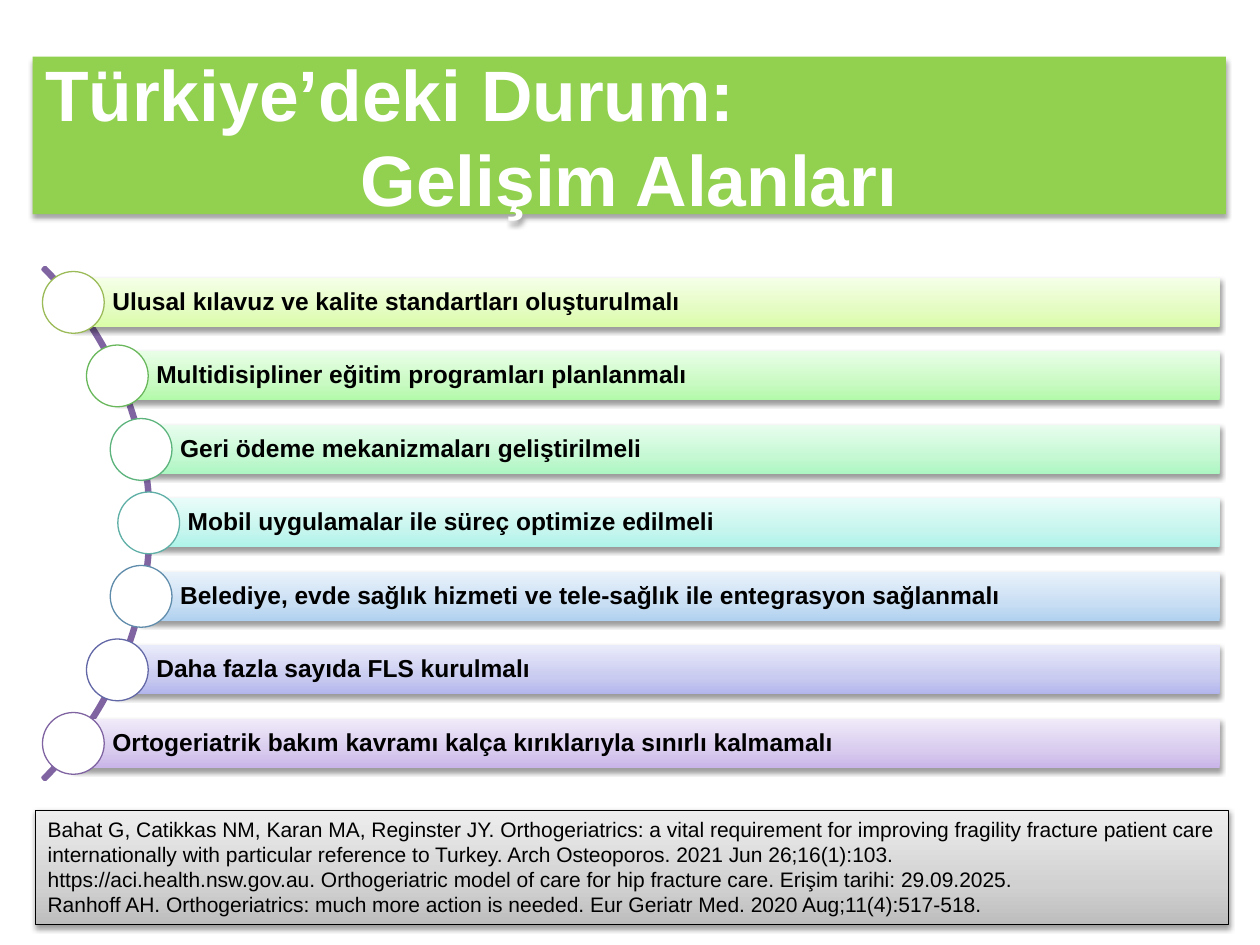
"""Build a slide on development areas in Turkey as a curved list with references."""
import math

import pptx
import pptx.dml.color
import pptx.enum.shapes
import pptx.enum.text
import pptx.oxml.ns
import pptx.oxml.xmlchemy
import pptx.util
from lxml import etree

Inches = pptx.util.Inches
Pt = pptx.util.Pt
SHAPE = pptx.enum.shapes.MSO_SHAPE
ALIGN = pptx.enum.text.PP_ALIGN
ANCHOR = pptx.enum.text.MSO_ANCHOR
qn = pptx.oxml.ns.qn


def rgb(value):
    return pptx.dml.color.RGBColor.from_string(value)


def add_panel(left, top, width, height, colors, lines, size, color, bold, alpha=38, dist=1.6):
    s = slide.shapes.add_shape(SHAPE.RECTANGLE, Inches(left), Inches(top), Inches(width), Inches(height))
    s.line.fill.background()
    if len(colors) == 1:
        s.fill.solid()
        s.fill.fore_color.rgb = rgb(colors[0])
    else:
        s.fill.gradient()
        s.fill.gradient_angle = 90
        stops = s._element.spPr.find(qn("a:gradFill")).find(qn("a:gsLst"))
        for stop in list(stops):
            stops.remove(stop)
        for pos, value in zip((0, 35, 100), colors):
            stop = etree.SubElement(stops, qn("a:gs"), pos=str(pos * 1000))
            etree.SubElement(stop, qn("a:srgbClr"), val=value)
    s.shadow.inherit = False
    effects = s._element.spPr.find(qn("a:effectLst"))
    shadow = etree.SubElement(effects, qn("a:outerShdw"), blurRad=str(Pt(3.1)), dist=str(Pt(dist)),
                              dir="5400000", rotWithShape="0")
    tint = etree.SubElement(shadow, qn("a:srgbClr"), val="000000")
    etree.SubElement(tint, qn("a:alpha"), val=str(alpha * 1000))
    tf = s.text_frame
    tf.word_wrap = True
    tf.vertical_anchor = ANCHOR.MIDDLE
    tf.text = "\n".join(lines)
    for p in tf.paragraphs:
        p.alignment = ALIGN.LEFT
        for r in p.runs:
            r.font.name = "Arial"
            r.font.size = Pt(size)
            r.font.bold = bold
            r.font.color.rgb = rgb(color)
    return s


prs = pptx.Presentation()
prs.slide_width = Inches(10)
prs.slide_height = Inches(7.5)
slide = prs.slides.add_slide(prs.slide_layouts[6])

title = add_panel(0.26, 0.45, 9.47, 1.25, ["92D050"], ["Türkiye’deki Durum:", "Gelişim Alanları"],
                  40.8, "FFFFFF", True, alpha=35, dist=1.8)
title.text_frame.paragraphs[1].alignment = ALIGN.CENTER

references = [
    "Bahat G, Catikkas NM, Karan MA, Reginster JY. Orthogeriatrics: a vital requirement for improving "
    "fragility fracture patient care internationally with particular reference to Turkey. "
    "Arch Osteoporos. 2021 Jun 26;16(1):103.",
    "https://aci.health.nsw.gov.au. Orthogeriatric model of care for hip fracture care. "
    "Erişim tarihi: 29.09.2025.",
    "Ranhoff AH. Orthogeriatrics: much more action is needed. Eur Geriatr Med. 2020 Aug;11(4):517-518.",
]
box = add_panel(0.28, 6.43, 9.47, 0.91, ["BDBDBD", "D1D1D1", "EEEEEE"], references, 12, "000000", False)
box.line.color.rgb = rgb("000000")
box.line.width = Pt(0.75)
box.text_frame.vertical_anchor = ANCHOR.TOP
box.text_frame.auto_size = pptx.enum.text.MSO_AUTO_SIZE.SHAPE_TO_FIT_TEXT

arc = slide.shapes.add_shape(SHAPE.BLOCK_ARC, Inches(-4.55), Inches(1.28), Inches(5.75), Inches(5.75))
for i, value in enumerate((189, 27, 0.004)):
    arc.adjustments[i] = value
arc.fill.background()
arc.line.color.rgb = rgb("8064A2")
arc.line.width = Pt(2)
arc.shadow.inherit = False

items = [
    ("Ulusal kılavuz ve kalite standartları oluşturulmalı", ["DAFDA7", "E4FCC2", "F5FFE7"], "9BBB59"),
    ("Multidisipliner eğitim programları planlanmalı", ["B2FAA9", "C9FAC3", "E9FEE7"], "69B75B"),
    ("Geri ödeme mekanizmaları geliştirilmeli", ["ACF6C1", "C5F8D3", "E8FDEE"], "5CB37C"),
    ("Mobil uygulamalar ile süreç optimize edilmeli", ["AEF3E9", "C6F5EE", "E8FCF9"], "5EAFA6"),
    ("Belediye, evde sağlık hizmeti ve tele-sağlık ile entegrasyon sağlanmalı",
     ["B0D1EF", "C8DEF3", "E9F2FB"], "608CAB"),
    ("Daha fazla sayıda FLS kurulmalı", ["B2B5EC", "C9CBF0", "EAEBFA"], "6267A6"),
    ("Ortogeriatrik bakım kavramı kalça kırıklarıyla sınırlı kalmamalı",
     ["C9B5E8", "D8CBEE", "F0EAF9"], "8064A2"),
]
arc_x, arc_y, radius = -1.68, 4.15, 2.86
pitch, bar_height, diameter, bar_right = 3.5 / 6, 0.39, 0.49, 9.68
for i, (text, colors, outline) in enumerate(items):
    offset = (i - 3) * pitch
    x = arc_x + math.sqrt(radius ** 2 - offset ** 2)
    y = arc_y + offset
    bar = add_panel(x, y - bar_height / 2, bar_right - x, bar_height, colors, [text], 14, "000000", True)
    tf = bar.text_frame
    tf.margin_left = Inches(0.31)
    tf.margin_right = tf.margin_top = tf.margin_bottom = Inches(0.04)
    tf.paragraphs[0].line_spacing = 0.9
    dot = slide.shapes.add_shape(SHAPE.OVAL, Inches(x - diameter / 2), Inches(y - diameter / 2),
                                 Inches(diameter), Inches(diameter))
    dot.fill.solid()
    dot.fill.fore_color.rgb = rgb("FFFFFF")
    dot.line.color.rgb = rgb(outline)
    dot.line.width = Pt(0.75)
    dot.shadow.inherit = False

prs.save("out.pptx")
